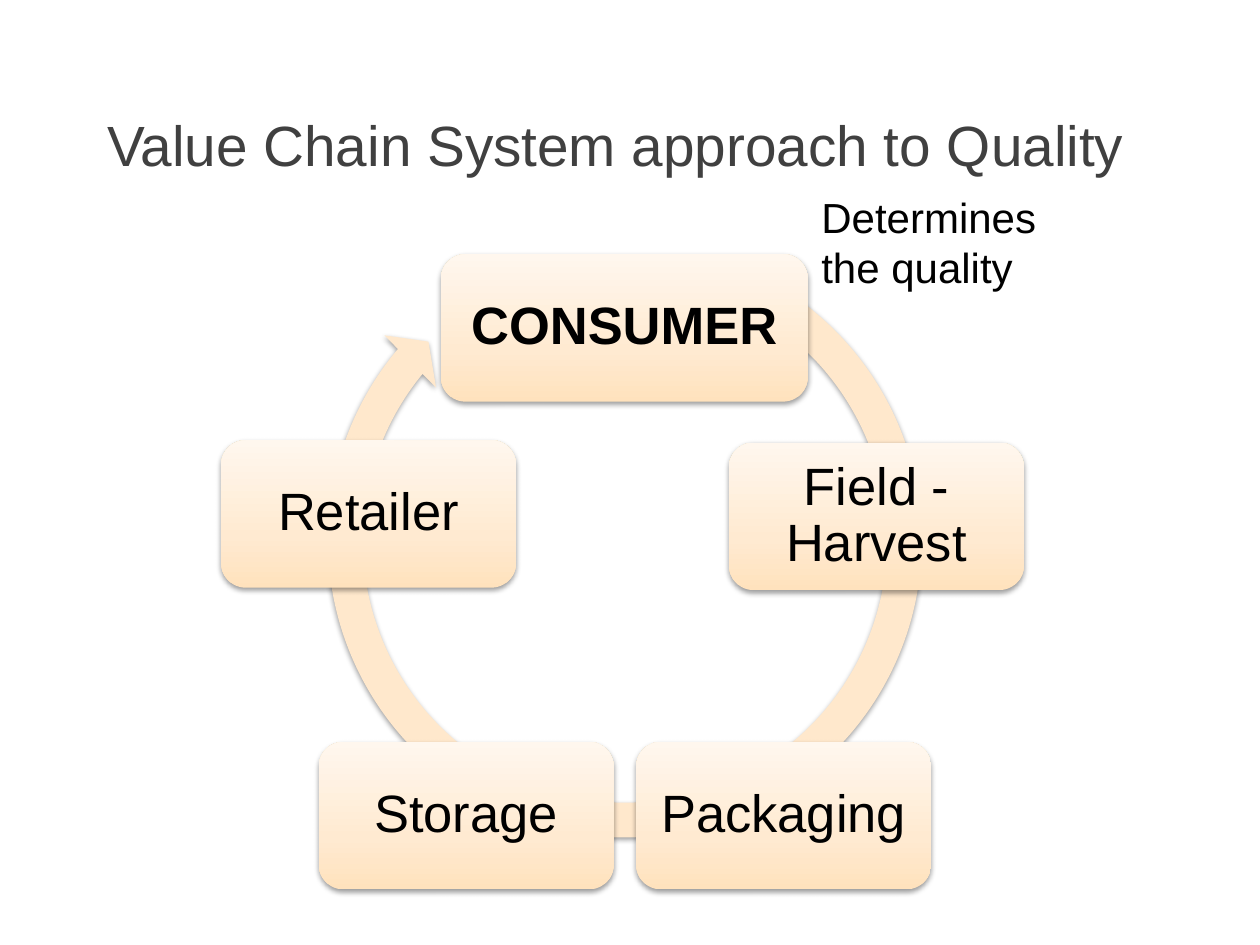
import copy

import pptx
import pptx.dml.color
import pptx.enum.shapes
import pptx.enum.text
import pptx.oxml
import pptx.oxml.ns
import pptx.util

Pt = pptx.util.Pt
KIND = pptx.enum.shapes.MSO_SHAPE
ALIGN = pptx.enum.text.PP_ALIGN
MID = pptx.enum.text.MSO_ANCHOR.MIDDLE
TOP = pptx.enum.text.MSO_ANCHOR.TOP
SHADE = (
    f'<a:outerShdw {pptx.oxml.ns.nsdecls("a")} blurRad="40000" dist="20000" '
    'dir="5400000" rotWithShape="0"><a:srgbClr val="000000">'
    '<a:alpha val="38000"/></a:srgbClr></a:outerShdw>'
)


def rgb(code):
    return pptx.dml.color.RGBColor.from_string(code)


def write(shape, text, form, anchor=MID, inset=(7.2, 3.6), align=ALIGN.CENTER,
          space=None, color="000000"):
    """Fill the shape's single paragraph; form holds font attributes."""
    side, edge = map(Pt, inset)
    frame = shape.text_frame
    setup = {"word_wrap": True, "vertical_anchor": anchor, "margin_left": side,
             "margin_right": side, "margin_top": edge, "margin_bottom": edge}
    for name, value in setup.items():
        setattr(frame, name, value)
    para = frame.paragraphs[0]
    para.alignment, para.line_spacing = align, space
    run = para.add_run()
    run.text = text
    for name, value in {"name": "Arial", **form}.items():
        setattr(run.font, name, value)
    run.font.color.rgb = rgb(color)


deck = pptx.Presentation()
deck.slide_width, deck.slide_height = Pt(720), Pt(540)
slide = deck.slides.add_slide(deck.slide_layouts[6])
shapes = slide.shapes

title = shapes.add_textbox(Pt(48.24), Pt(37.44), Pt(606.96), Pt(90))
write(title, "Value Chain System approach to Quality", {"size": Pt(32.4)},
      color="404040")

# Ring arrow behind the steps
ring = shapes.add_shape(KIND.CIRCULAR_ARROW, Pt(176.4), Pt(128.16),
                        Pt(361.44), Pt(361.44))
for i, value in enumerate([0.055, 3.307, 131.901, 177.537, 0.058]):
    ring.adjustments[i] = value
ring.fill.solid()
ring.fill.fore_color.rgb = rgb("FFE8CC")

# Steps, clockwise from the top: text, left, top, width, bold
high, wide = 84.24, 168.48
steps = [
    ("CONSUMER", 252, 145.3, 209.6, True),
    ("Field - Harvest", 416.6, 253, wide, False),
    ("Packaging", 363.6, 424, wide, False),
    ("Storage", 182.2, 424, wide, False),
    ("Retailer", 126.4, 251.6, wide, False),
]
cards = []
for text, left, top, width, bold in steps:
    card = shapes.add_shape(KIND.ROUNDED_RECTANGLE, Pt(left), Pt(top),
                            Pt(width), Pt(high))
    card.fill.gradient()
    card.fill.gradient_angle = 90
    stops = card._element.spPr.find(".//" + pptx.oxml.ns.qn("a:gsLst"))
    stops.insert(1, copy.deepcopy(stops[0]))
    tones = [(0, "FFE2BD"), (0.35, "FFEAD1"), (1, "FFF7EE")]
    for stop, (place, tone) in zip(card.fill.gradient_stops, tones):
        stop.position = place
        stop.color.rgb = rgb(tone)
    write(card, text, {"size": Pt(30), "bold": bold}, inset=(7.2, 8.6),
          space=0.9)
    cards.append(card)

for shape in [ring, *cards]:
    shape.line.fill.background()
    shape.shadow.inherit = False
    glow = shape._element.spPr.find(pptx.oxml.ns.qn("a:effectLst"))
    glow.append(pptx.oxml.parse_xml(SHADE))

note = shapes.add_textbox(Pt(462.24), Pt(105.84), Pt(151.92), Pt(65.52))
write(note, "Determines the quality", {"size": Pt(24)}, TOP, align=ALIGN.LEFT)

deck.save("out.pptx")
